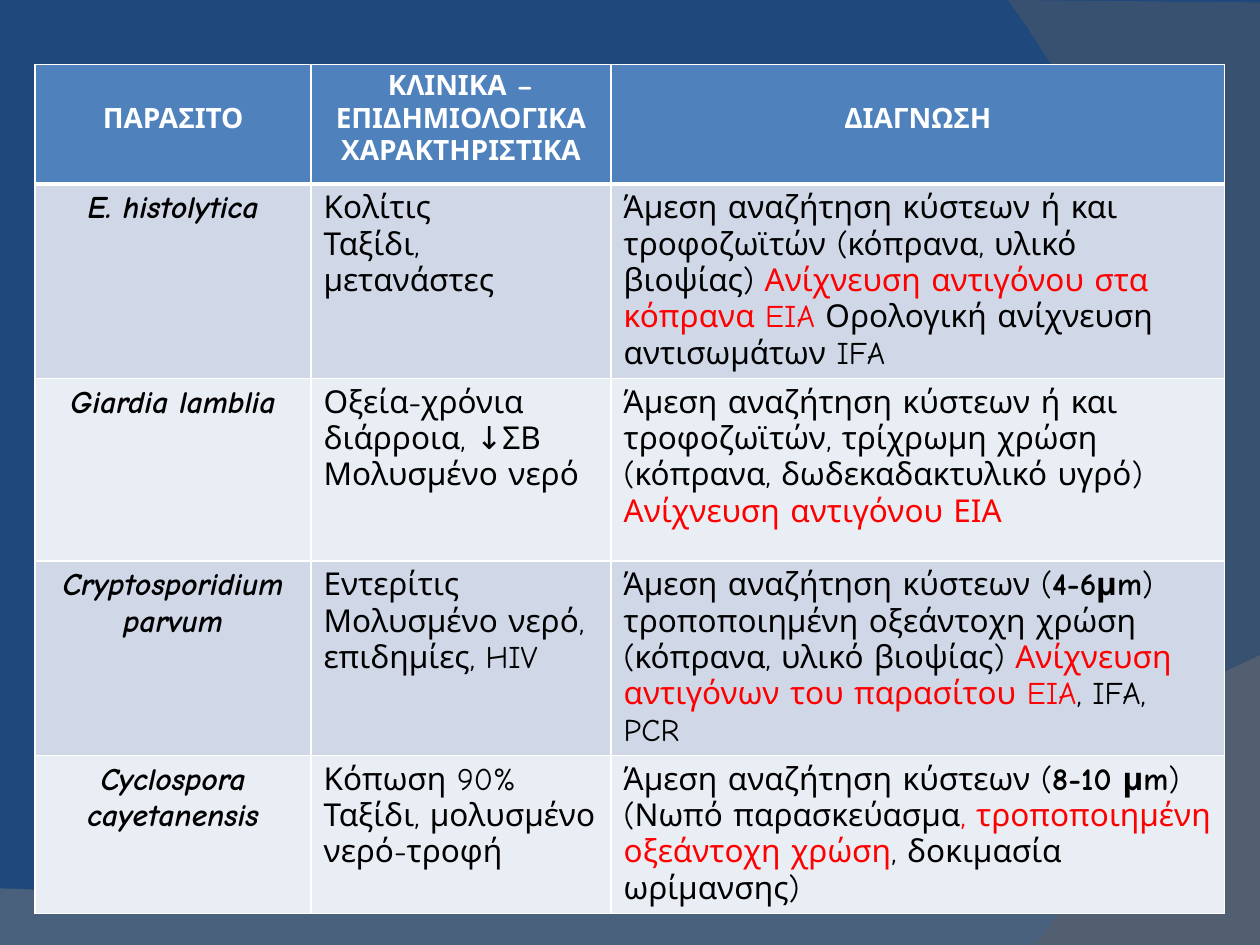
from lxml import etree
from pptx import Presentation
from pptx.dml.color import RGBColor
from pptx.enum.text import PP_ALIGN as Align
from pptx.oxml import parse_xml
from pptx.oxml.ns import nsdecls, qn
from pptx.util import Cm, Pt

FONT = "Comic Neue"
WHITE, BLACK, RED = "FFFFFF", "000000", "FF0000"
HEADER_FILL, BAND_FILLS = "4F81BD", ("D0D8E8", "E9EDF4")
COLUMN_WIDTHS = (5.56, 6.05, 12.37)
ROW_HEIGHTS = (2.41, 3.61, 3.68, 3.68, 2.97)

# Span styles
HEADING = {"size": Pt(16), "bold": True, "color": WHITE}
PLAIN = {"size": Pt(18), "bold": False, "color": BLACK}
SPECIES = {**PLAIN, "bold": True, "italic": True}
STRONG = {**PLAIN, "bold": True}
ALERT = {**PLAIN, "color": RED}

HEADINGS = ("ΠΑΡΑΣΙΤΟ", "ΚΛΙΝΙΚΑ –ΕΠΙΔΗΜΙΟΛΟΓΙΚΑ ΧΑΡΑΚΤΗΡΙΣΤΙΚΑ", "ΔΙΑΓΝΩΣΗ")

# Parasite, clinical paragraphs, diagnosis paragraphs made of (text, style) spans
PARASITES = (
    ("E. histolytica",
     ("Κολίτις", "Ταξίδι, μετανάστες"),
     [[("Άμεση αναζήτηση κύστεων ή και τροφοζωϊτών (κόπρανα, υλικό βιοψίας) ", PLAIN),
       ("Ανίχνευση αντιγόνου στα κόπρανα EIA ", ALERT),
       ("Ορολογική ανίχνευση αντισωμάτων IFA", PLAIN)]]),
    ("Giardia lamblia",
     ("Οξεία-χρόνια διάρροια, ↓ΣΒ", "Μολυσμένο νερό"),
     [[("Άμεση αναζήτηση κύστεων ή και τροφοζωϊτών, τρίχρωμη χρώση "
        "(κόπρανα, δωδεκαδακτυλικό υγρό)", PLAIN)],
      [("Ανίχνευση αντιγόνου ΕΙΑ", ALERT)]]),
    ("Cryptosporidium parvum",
     ("Εντερίτις Μολυσμένο νερό, επιδημίες, HIV",),
     [[("Άμεση αναζήτηση κύστεων (", PLAIN), ("4-6μm", STRONG),
       (") τροποποιημένη οξεάντοχη χρώση (κόπρανα, υλικό βιοψίας) ", PLAIN),
       ("Ανίχνευση αντιγόνων του παρασίτου EIA", ALERT), (", IFA, PCR", PLAIN)]]),
    ("Cyclospora cayetanensis",
     ("Κόπωση 90%", "Ταξίδι, μολυσμένο νερό-τροφή"),
     [[("Άμεση αναζήτηση κύστεων (", PLAIN), ("8-10 μm", STRONG),
       (") (Νωπό παρασκεύασμα", PLAIN),
       (", τροποποιημένη οξεάντοχη χρώση", ALERT),
       (", δοκιμασία ωρίμανσης)", PLAIN)]]),
)


def rgb(value):
    return RGBColor.from_string(value)


def paint(fill, color):
    fill.solid()
    fill.fore_color.rgb = rgb(color)


def curve(start, first, second, end, steps=40):
    """Points along a cubic curve, without its start."""
    points = []
    for step in range(1, steps + 1):
        t = step / steps
        weights = ((1 - t) ** 3, 3 * t * (1 - t) ** 2, 3 * t * t * (1 - t), t ** 3)
        points.append(tuple(
            sum(weight * point[axis] for weight, point in zip(weights, (start, first, second, end)))
            for axis in (0, 1)))
    return points


def add_wave(page, corners, bend, color, opacity):
    """Translucent shape: straight corners, then a curve from the last one."""
    points = [(Cm(x), Cm(y)) for x, y in corners + curve(corners[-1], *bend)]
    builder = page.shapes.build_freeform(*points[0], scale=1.0)
    builder.add_line_segments(points[1:], close=True)
    wave = builder.convert_to_shape()
    wave.shadow.inherit = False
    wave.line.fill.background()
    paint(wave.fill, color)
    shade = wave.fill._xPr.find(qn("a:solidFill"))[0]
    etree.SubElement(shade, qn("a:alpha")).set("val", str(opacity * 1000))


def set_borders(cell, **widths):
    properties = cell._tc.get_or_add_tcPr()
    for side in "LRTB":
        width = Pt(widths.get(side, 1))
        properties.append(parse_xml(
            f'<a:ln{side} {nsdecls("a")} w="{width}"><a:solidFill>'
            f'<a:srgbClr val="{WHITE}"/></a:solidFill></a:ln{side}>'))


def add_span(para, text, style):
    span = para.add_run()
    span.text = text
    span.font.name = FONT
    for name, value in style.items():
        if name == "color":
            span.font.color.rgb = rgb(value)
        else:
            setattr(span.font, name, value)


def fill_cell(cell, paragraphs, color, align=Align.LEFT, **borders):
    set_borders(cell, **borders)
    paint(cell.fill, color)
    frame = cell.text_frame
    for index, spans in enumerate(paragraphs):
        para = frame.add_paragraph() if index else frame.paragraphs[0]
        para.alignment = align
        for text, style in spans:
            add_span(para, text, style)


def add_parasite_table(page):
    table = page.shapes.add_table(
        len(ROW_HEIGHTS), len(COLUMN_WIDTHS), Cm(0.71), Cm(1.3),
        Cm(sum(COLUMN_WIDTHS)), Cm(sum(ROW_HEIGHTS))).table
    for column, width in zip(table.columns, COLUMN_WIDTHS):
        column.width = Cm(width)
    for row, height in zip(table.rows, ROW_HEIGHTS):
        row.height = Cm(height)

    # Header row: the short headings sit level with the middle line
    for index, heading in enumerate(HEADINGS):
        cell = table.cell(0, index)
        fill_cell(cell, [[(heading, HEADING)]], HEADER_FILL, Align.CENTER, B=3)
        if index != 1:
            cell.margin_top = Cm(0.78)

    # One banded row per parasite
    for row, (species, clinical, diagnosis) in enumerate(PARASITES, start=1):
        color = BAND_FILLS[(row - 1) % 2]
        borders = {"T": 3 if row == 1 else 1}
        fill_cell(table.cell(row, 0), [[(species, SPECIES)]], color, Align.CENTER, **borders)
        fill_cell(table.cell(row, 1), [[(text, PLAIN)] for text in clinical], color, **borders)
        fill_cell(table.cell(row, 2), diagnosis, color, **borders)


def main():
    deck = Presentation()
    deck.slide_width, deck.slide_height = Cm(25.4), Cm(19.05)
    page = deck.slides.add_slide(deck.slide_layouts[6])
    paint(page.background.fill, "1F497D")

    # Background waves: bottom, then right
    add_wave(page, [(0, 17.91), (0, 19.05), (25.4, 19.05), (25.4, 13.21)],
             [(14.2, 18.52), (9.93, 18.26), (0, 17.91)], "7F7F7F", 45)
    add_wave(page, [(25.4, 0.05), (25.4, 19.05), (20.85, 19.05)],
             [(23.75, 15.72), (25.86, 7.62), (20.32, 0)], "5E5E5E", 40)

    add_parasite_table(page)
    deck.save("out.pptx")


if __name__ == "__main__":
    main()
